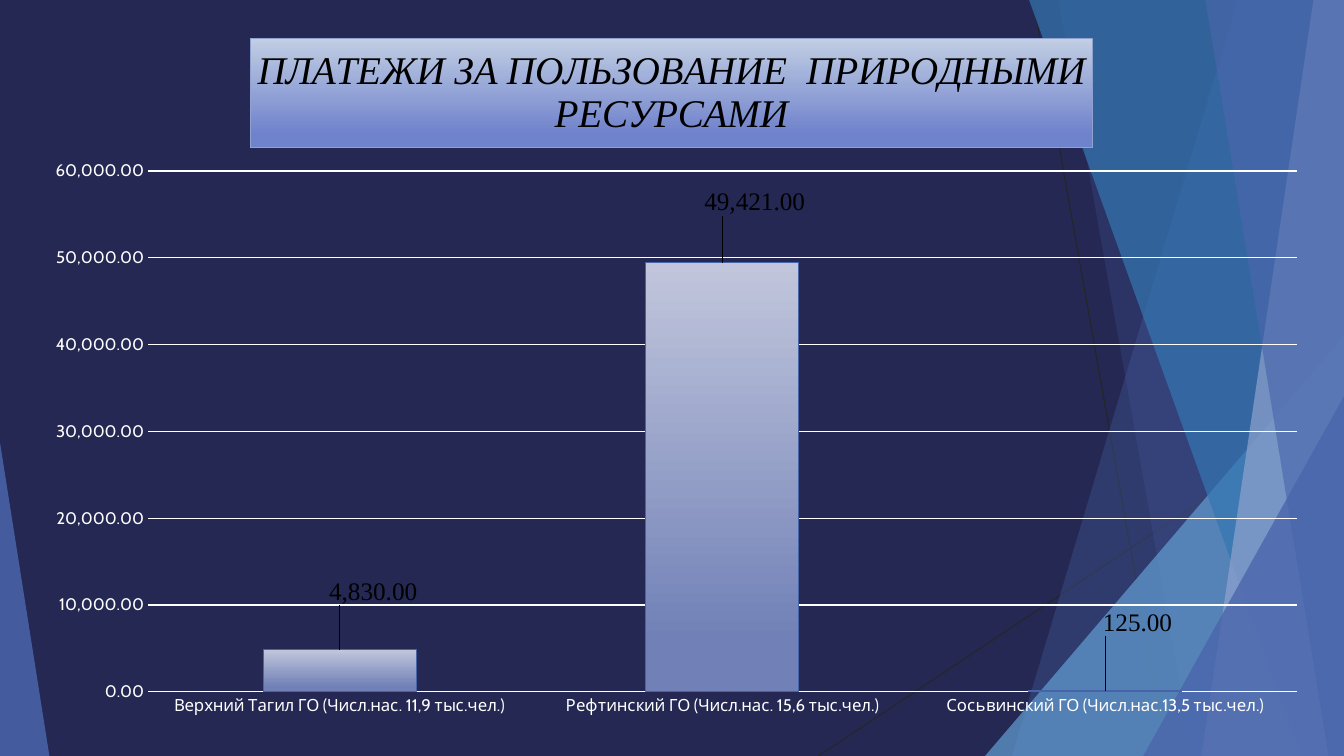
from pptx import Presentation
from pptx.chart.data import CategoryChartData
from pptx.dml.color import RGBColor
from pptx.enum.chart import XL_CHART_TYPE, XL_LABEL_POSITION, XL_TICK_MARK
from pptx.enum.shapes import MSO_CONNECTOR, MSO_SHAPE
from pptx.oxml import parse_xml
from pptx.oxml.ns import nsdecls, qn
from pptx.util import Pt

# Content
TITLE = "ПЛАТЕЖИ ЗА ПОЛЬЗОВАНИЕ  ПРИРОДНЫМИ РЕСУРСАМИ"
PAYMENTS = {
    "Верхний Тагил ГО (Числ.нас. 11,9 тыс.чел.)": 4830,
    "Рефтинский ГО (Числ.нас. 15,6 тыс.чел.)": 49421,
    "Сосьвинский ГО (Числ.нас.13,5 тыс.чел.)": 125,
}
NUMBER_FORMAT = "#,##0.00"

THEME = {
    "background": "242852", "ray": "262626", "text": "FFFFFF", "dark": "000000",
    "blue": "4A66AC", "sky": "629DD1", "teal": "3477B2", "pale": "90A2CF",
    "bar": ("C1C6DC", "7181B7"), "bar_line": "4864A8",
    "banner": ("C1CEE3", "6F82CC"),
    "body_font": "Cabin", "accent_font": "Times New Roman",
    "title_size": 28, "label_size": 18, "axis_size": 12, "base_size": 10,
    "line": 0.75,
}

# Geometry in points
WIDTH, HEIGHT = 960, 540
RAYS = [(738, 0, 833.8, HEIGHT), (WIDTH, 290.2, 584.6, HEIGHT)]
# facet: top x, bottom x, reaching to the right edge
# triangle: left, top, width, apex, reaching to the bottom edge
DECORATION = [
    ("facet", (884.2, 722.9), "blue", 30),
    ("facet", (756, 851.8), "blue", 20),
    ("triangle", (703.6, 240, 256.4, 1), "sky", 72),
    ("facet", (735.1, 929.5), "teal", 70),
    ("facet", (938.2, 858.2), "pale", 70),
    ("facet", (861.1, 949), "blue", 65),
    ("triangle", (816.6, 283, 143.4, 1), "blue", 80),
    ("triangle", (0, 316.1, 35.3, 0), "blue", 85),
]
CHART_BOX = (20.9, 13, 923.8, 509)
# Fractions of the chart
PLOT_LAYOUT = {"x": 0.092, "y": 0.2145, "w": 0.888, "h": 0.731}
TITLE_LAYOUT = {"x": 0.171, "y": 0.028}
LABEL_SHIFTS = [(0.026, -0.057), (0.025, -0.06), (0.025, -0.07)]


def color(name):
    return RGBColor.from_string(THEME.get(name, name))


def style_font(font, size, tone, face):
    font.size = Pt(THEME[size])
    font.color.rgb = color(tone)
    font.name = THEME[face]


def style_line(line, tone):
    line.color.rgb = color(tone)
    line.width = Pt(THEME["line"])


def fill_gradient(fill, tones, end):
    fill.gradient()
    fill.gradient_angle = 270
    for stop, tone, position in zip(fill.gradient_stops, tones, (0, end)):
        stop.color.rgb = color(tone)
        stop.position = position


def set_layout(parent, index, values, inner=False):
    for old in parent.findall(qn("c:layout")):
        parent.remove(old)
    parts = '<c:layoutTarget val="inner"/>' if inner else ""
    if inner:
        parts += '<c:xMode val="edge"/><c:yMode val="edge"/>'
    elif parent.tag == qn("c:title"):
        parts = '<c:xMode val="edge"/><c:yMode val="edge"/>'
    parts += "".join(f'<c:{key} val="{value}"/>' for key, value in values.items())
    parent.insert(index, parse_xml(
        f'<c:layout {nsdecls("c")}><c:manualLayout>{parts}</c:manualLayout></c:layout>'))


def add_ray(page, ends):
    ray = page.shapes.add_connector(MSO_CONNECTOR.STRAIGHT, *map(Pt, ends))
    style_line(ray.line, "ray")
    ray._element.spPr.append(parse_xml(f'<a:effectLst {nsdecls("a")}/>'))


def add_decoration(page, kind, numbers, tone, opacity):
    if kind == "facet":
        top, bottom = numbers
        builder = page.shapes.build_freeform(Pt(top), 0)
        builder.add_line_segments(
            [(Pt(x), Pt(y)) for x, y in
             ((WIDTH, 0), (WIDTH, HEIGHT), (bottom, HEIGHT))], close=True)
        shape = builder.convert_to_shape()
    else:
        left, top, width, apex = numbers
        shape = page.shapes.add_shape(
            MSO_SHAPE.ISOSCELES_TRIANGLE, Pt(left), Pt(top), Pt(width), Pt(HEIGHT - top))
        shape.adjustments[0] = apex
    shape.shadow.inherit = False
    shape.line.fill.background()
    shape.fill.solid()
    shape.fill.fore_color.rgb = color(tone)
    tint = shape._element.spPr.find(qn("a:solidFill"))[0]
    tint.append(parse_xml(f'<a:alpha {nsdecls("a")} val="{opacity * 1000}"/>'))


def add_title(chart):
    chart.has_title = True
    title = chart.chart_title
    span = title.text_frame.paragraphs[0].add_run()
    span.text = TITLE
    style_font(span.font, "title_size", "dark", "accent_font")
    span.font.italic = True
    span.font.bold = False
    fill_gradient(title.format.fill, THEME["banner"], 0.88)
    style_line(title.format.line, "pale")
    set_layout(chart._chartSpace.find(".//" + qn("c:title")), 1, TITLE_LAYOUT)


def add_labels(series):
    for index, (x, y) in enumerate(LABEL_SHIFTS):
        label = series.points[index].data_label
        style_font(label.font, "label_size", "dark", "accent_font")
        label.position = XL_LABEL_POSITION.OUTSIDE_END
        element = series._element.findall(".//" + qn("c:dLbl"))[index]
        set_layout(element, 1, {"x": x, "y": y})
        element.insert(2, parse_xml(
            f'<c:numFmt {nsdecls("c")} formatCode="{NUMBER_FORMAT}" sourceLinked="0"/>'))
        element.insert(3, parse_xml(
            f'<c:spPr {nsdecls("c", "a")}><a:noFill/><a:ln w="{Pt(THEME["line"])}">'
            f'<a:solidFill><a:srgbClr val="{THEME["pale"]}"/></a:solidFill></a:ln></c:spPr>'))


def add_payment_chart(page):
    data = CategoryChartData(number_format=NUMBER_FORMAT)
    data.categories = list(PAYMENTS)
    data.add_series("Series 1", list(PAYMENTS.values()))
    chart = page.shapes.add_chart(
        XL_CHART_TYPE.COLUMN_CLUSTERED, *map(Pt, CHART_BOX), data).chart
    chart.has_legend = False
    style_font(chart.font, "base_size", "text", "body_font")
    add_title(chart)
    set_layout(chart._chartSpace.find(".//" + qn("c:plotArea")), 0, PLOT_LAYOUT, inner=True)

    # Axes
    for axis in (chart.category_axis, chart.value_axis):
        axis.major_tick_mark = axis.minor_tick_mark = XL_TICK_MARK.NONE
        axis.format.line.fill.background()
        style_font(axis.tick_labels.font, "axis_size", "text", "body_font")
    values = chart.value_axis
    values.minimum_scale, values.maximum_scale, values.major_unit = 0, 60000, 10000
    values.tick_labels.number_format = NUMBER_FORMAT
    values.tick_labels.number_format_is_linked = False
    style_line(values.major_gridlines.format.line, "text")

    # Columns
    plot = chart.plots[0]
    plot.gap_width = 150
    plot.vary_by_categories = False
    series = plot.series[0]
    fill_gradient(series.format.fill, THEME["bar"], 0.88)
    style_line(series.format.line, "bar_line")
    add_labels(series)


def main():
    deck = Presentation()
    deck.slide_width, deck.slide_height = Pt(WIDTH), Pt(HEIGHT)
    page = deck.slides.add_slide(deck.slide_layouts[6])
    page.background.fill.solid()
    page.background.fill.fore_color.rgb = color("background")
    for ends in RAYS:
        add_ray(page, ends)
    for part in DECORATION:
        add_decoration(page, *part)
    add_payment_chart(page)
    deck.save("out.pptx")


if __name__ == "__main__":
    main()
